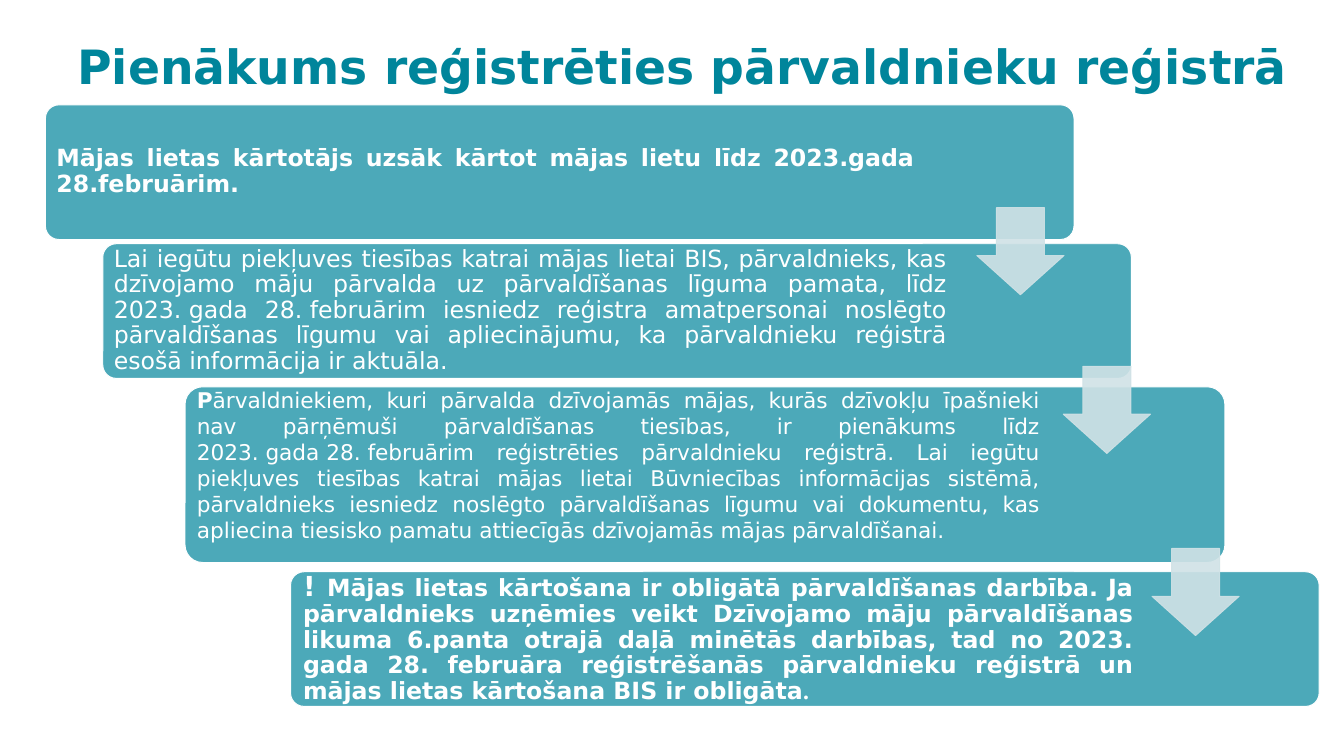
"""Build the slide on the duty to register in the managers' register."""
import collections

import lxml.etree
import pptx
import pptx.dml.color
import pptx.enum.shapes
import pptx.enum.text
import pptx.oxml.ns
import pptx.util

WIDTH, HEIGHT = 18.96, 10.67
FONT = "DejaVu Sans"
COLOURS = {"title": "00859B", "card": "4CA9B9", "white": "FFFFFF", "arrow": "D0E2E6"}
ALIGN = pptx.enum.text.PP_ALIGN
SHAPES = pptx.enum.shapes.MSO_SHAPE
HARD_SPACE = chr(160)

Box = collections.namedtuple("Box", "left top width height")
Span = collections.namedtuple("Span", "text size bold font", defaults=(False, FONT))
Step = collections.namedtuple("Step", "box text_width pad lift inset spacing spans")

TITLE_BOX = Box(4.27, 2.81, 93.04, 12.75)
TITLE = [Span("Pienākums reģistrēties pārvaldnieku reģistrā", 48, True)]
ARROW_SIZE = (6.49, 11.53)
ARROW_PLACES = [(72.68, 27.46), (79.11, 48.45), (85.71, 72.54)]
STEPS = [
    Step(Box(3.38, 13.87, 76.53, 17.81), 64.87, 0.3, 0.05, 0.1, 0.9, [
        Span("Mājas lietas kārtotājs uzsāk kārtot mājas lietu līdz 2023.gada 28.februārim.",
             24, True)]),
    Step(Box(7.65, 32.24, 76.53, 17.81), 63.03, 0.3, 0.05, 0.1, 0.9, [
        Span("Lai iegūtu piekļuves tiesības katrai mājas lietai BIS, pārvaldnieks, kas "
             "dzīvojamo māju pārvalda uz pārvaldīšanas līguma pamata, līdz "
             f"2023.{HARD_SPACE}gada 28.{HARD_SPACE}februārim iesniedz reģistra "
             "amatpersonai noslēgto pārvaldīšanas līgumu vai apliecinājumu, ka "
             "pārvaldnieku reģistrā esošā informācija ir aktuāla.", 24)]),
    Step(Box(13.77, 51.17, 77.37, 23.24), 63.66, 0.4, 1.33, 0.09, 1.0, [
        Span("P", 22, True),
        Span("ārvaldniekiem, kuri pārvalda dzīvojamās mājas, kurās dzīvokļu īpašnieki "
             "nav pārņēmuši pārvaldīšanas tiesības, ir pienākums līdz "
             f"2023.{HARD_SPACE}gada{HARD_SPACE}28.{HARD_SPACE}februārim reģistrēties "
             "pārvaldnieku reģistrā. Lai iegūtu "
             "piekļuves tiesības katrai mājas lietai Būvniecības informācijas sistēmā, "
             "pārvaldnieks iesniedz noslēgto pārvaldīšanas līgumu vai dokumentu, kas "
             "apliecina tiesisko pamatu attiecīgās dzīvojamās mājas pārvaldīšanai.", 22)]),
    Step(Box(21.62, 75.63, 76.53, 17.81), 63.03, 0.3, 0.05, 0.12, 0.9, [
        Span("! ", 28, True),
        Span("Mājas lietas kārtošana ir obligātā pārvaldīšanas darbība. Ja "
             "pārvaldnieks uzņēmies veikt Dzīvojamo māju pārvaldīšanas "
             "likuma 6.panta otrajā daļā minētās darbības, tad no 2023. "
             "gada 28. februāra reģistrēšanās pārvaldnieku reģistrā un "
             "mājas lietas kārtošana BIS ir obligāta", 24, True),
        Span(".", 24, True, "Times New Roman")]),
]


def colour(name):
    """Return a named colour."""
    return pptx.dml.color.RGBColor.from_string(COLOURS[name])


def place(box):
    """Turn a box in percent of the slide into lengths."""
    return (pptx.util.Inches(box.left * WIDTH / 100),
            pptx.util.Inches(box.top * HEIGHT / 100),
            pptx.util.Inches(box.width * WIDTH / 100),
            pptx.util.Inches(box.height * HEIGHT / 100))


def add_text(page, box, spans, ink, align, inset, spacing=0.9, before=0):
    """Add a middle-anchored paragraph made of spans."""
    frame = page.shapes.add_textbox(*place(box)).text_frame
    frame.word_wrap = True
    frame.vertical_anchor = pptx.enum.text.MSO_ANCHOR.MIDDLE
    margin = pptx.util.Inches(inset)
    frame.margin_left = frame.margin_right = margin
    frame.margin_top = frame.margin_bottom = margin
    para = frame.paragraphs[0]
    para.alignment = align
    para.line_spacing = spacing
    para.space_before = pptx.util.Pt(before)
    for span in spans:
        run = para.add_run()
        run.text = span.text
        run.font.name = span.font
        run.font.size = pptx.util.Pt(span.size)
        run.font.bold = span.bold
        run.font.color.rgb = colour(ink)


def add_figure(page, kind, box, adjustments, fill, line):
    """Add a filled and outlined preset shape."""
    figure = page.shapes.add_shape(kind, *place(box))
    figure.shadow.inherit = False
    for index, value in enumerate(adjustments):
        figure.adjustments[index] = value
    figure.fill.solid()
    figure.fill.fore_color.rgb = colour(fill)
    figure.line.color.rgb = colour(line)
    figure.line.width = pptx.util.Pt(1)
    return figure


def add_step(page, step):
    """Add a rounded card and the text set inside it."""
    box = step.box
    add_figure(page, SHAPES.ROUNDED_RECTANGLE, box, [0.1], "card", "white")
    inner = Box(box.left + step.pad, box.top + step.pad - step.lift,
                step.text_width, box.height - 2 * step.pad)
    add_text(page, inner, step.spans, "white", ALIGN.JUSTIFY, step.inset, step.spacing)


def add_arrow(page, box):
    """Add a slightly see-through arrow between two steps."""
    arrow = add_figure(page, SHAPES.DOWN_ARROW, box, [0.55, 0.45], "arrow", "arrow")
    for shade in arrow.element.spPr.iter(pptx.oxml.ns.qn("a:srgbClr")):
        lxml.etree.SubElement(shade, pptx.oxml.ns.qn("a:alpha"), val="90000")


def main():
    """Build and save the deck."""
    deck = pptx.Presentation()
    deck.slide_width = pptx.util.Inches(WIDTH)
    deck.slide_height = pptx.util.Inches(HEIGHT)
    page = deck.slides.add_slide(deck.slide_layouts[6])
    add_text(page, TITLE_BOX, TITLE, "title", ALIGN.CENTER, 0.1, before=10)
    for step in STEPS:
        add_step(page, step)
    for left, top in ARROW_PLACES:
        add_arrow(page, Box(left, top, *ARROW_SIZE))
    deck.save("out.pptx")


if __name__ == "__main__":
    main()
